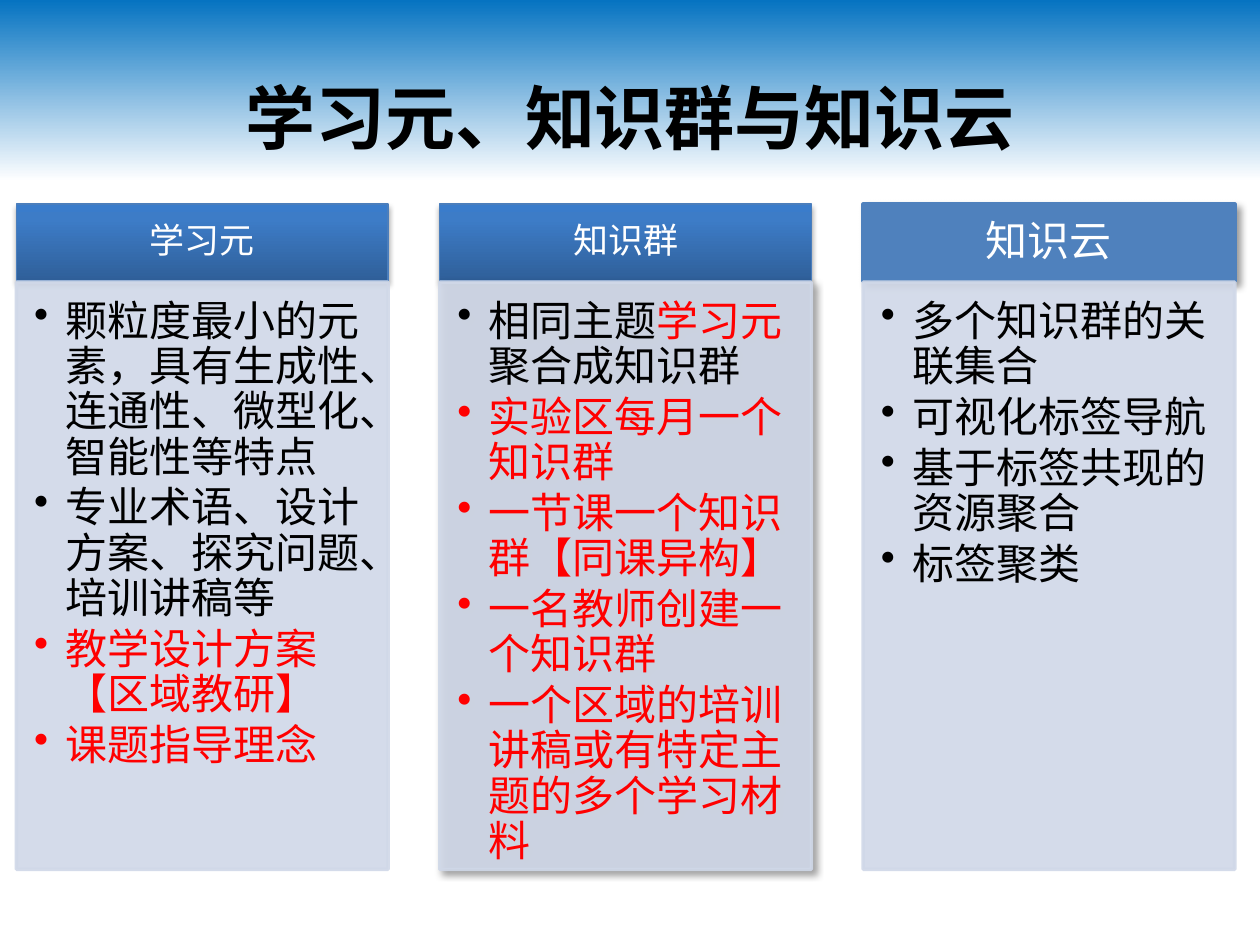
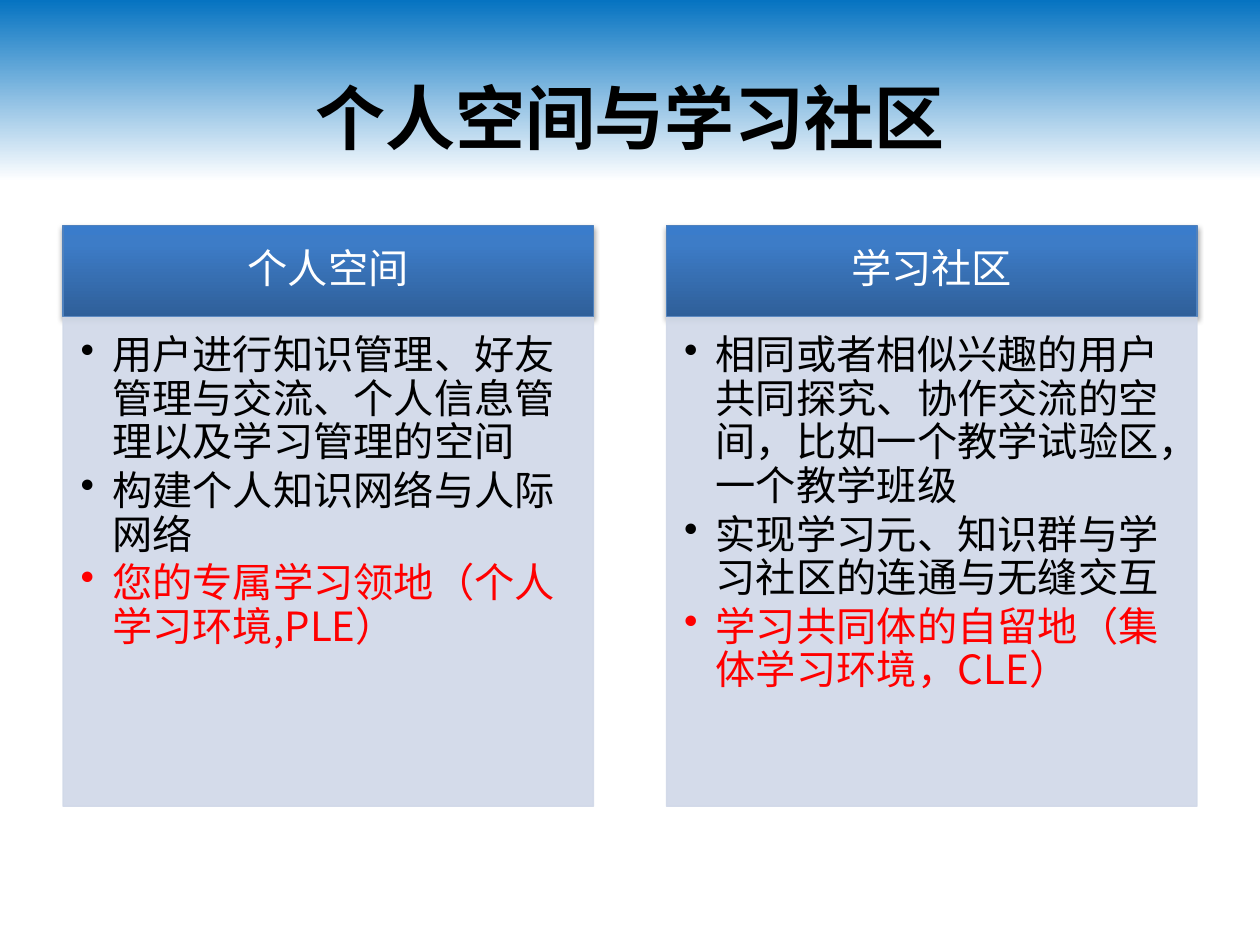
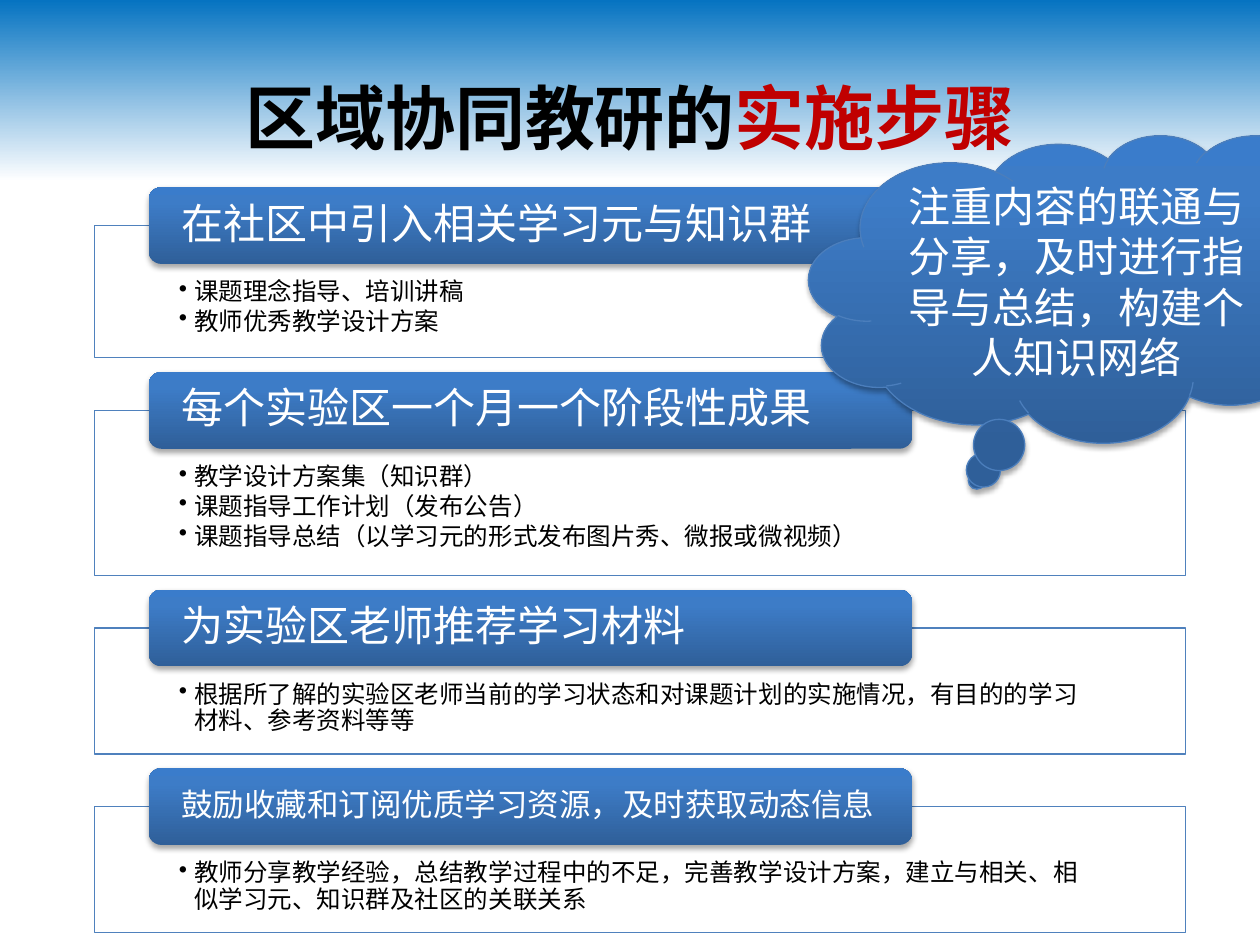
from pptx import Presentation
from pptx.dml.color import RGBColor
from pptx.enum.shapes import MSO_SHAPE as SHAPE
from pptx.enum.text import MSO_ANCHOR as ANCHOR, PP_ALIGN as ALIGN
from pptx.oxml import parse_xml
from pptx.oxml.ns import nsdecls, qn
from pptx.oxml.xmlchemy import OxmlElement
from pptx.util import Inches, Pt

COLORS = {
    "black": "000000", "white": "FFFFFF", "red": "FF0000", "dark red": "C00000",
    "sky": "0070C0", "blue": "4F81BD", "edge": "4B7EBC", "pale": "D0D8E8",
    "deep": "2F5F99", "mid": "3D7CC7", "light": "3A7CCB",
}
FONT, ACCENT_FONT = "Noto Sans CJK SC", "Noto Sans CJK JP"
COLUMNS, ROWS = 100, 75
WIDTH, HEIGHT = Inches(10), Inches(7.5)

# Gradients: (stops, clockwise angle). Shadows: (alpha %, blur pt, distance pt, angle).
BAND = ([(0, "sky"), (100, "white")], 90)
GLOSS = ([(0, "deep"), (80, "mid"), (100, "light")], 270)
SOFT_SHADOW = (35, 3.1, 1.8, 90)
CORNER_SHADOW = (40, 4, 3, 45)


def rgb(name):
    return RGBColor.from_string(COLORS[name])


def sub(parent, tag, **attributes):
    child = OxmlElement(tag)
    for key, value in attributes.items():
        child.set(key, str(value))
    parent.append(child)
    return child


def red(*texts):
    return [[(text, "red")] for text in texts]


def write(shape, paragraphs, size, color="white", bold=False, align=ALIGN.LEFT,
          anchor=ANCHOR.MIDDLE, insets=(1, 0.5, 1, 0.5), spacing=0.9, bullet=0):
    """Fill a shape with paragraphs: strings, or lists of (text, colour, font) runs.

    Insets and the bullet's hanging indent are in grid columns.
    """
    frame = shape.text_frame
    frame.word_wrap = True
    frame.vertical_anchor = anchor
    (frame.margin_left, frame.margin_top,
     frame.margin_right, frame.margin_bottom) = [int(n * WIDTH / COLUMNS) for n in insets]
    for index, content in enumerate(paragraphs):
        paragraph = frame.paragraphs[0] if index == 0 else frame.add_paragraph()
        properties = paragraph._p.get_or_add_pPr()
        properties.set("hangingPunct", "1")
        if bullet:
            indent = int(bullet * WIDTH / COLUMNS)
            properties.set("marL", str(indent))
            properties.set("indent", str(-indent))
            sub(properties, "a:buChar", char="•")
            paragraph.space_after = Pt(round(size * 0.13, 1))
        paragraph.alignment = align
        paragraph.line_spacing = spacing
        runs = [(content,)] if isinstance(content, str) else content
        for text, *style in runs:
            run_color, font_name = style + [color, FONT][len(style):]
            run = paragraph.add_run()
            run.text = text
            run.font.size, run.font.bold = Pt(size), bold
            run.font.color.rgb = rgb(run_color)
            run.font.name = font_name
            sub(run._r.get_or_add_rPr(), "a:ea", typeface=font_name)


class Deck:
    def __init__(self):
        self.presentation = Presentation()
        self.presentation.slide_width, self.presentation.slide_height = WIDTH, HEIGHT
        self.slide = None

    def place(self, left, top, width, height):
        """Turn grid columns and rows into slide lengths."""
        return [int(left * WIDTH / COLUMNS), int(top * HEIGHT / ROWS),
                int(width * WIDTH / COLUMNS), int(height * HEIGHT / ROWS)]

    def start(self, *title_runs):
        self.slide = self.presentation.slides.add_slide(self.presentation.slide_layouts[6])
        self.box((0, -0.3, 100, 14.7), BAND)
        title = self.slide.shapes.add_textbox(*self.place(5, 3, 90, 12.5))
        write(title, [list(title_runs)], 40, "black", bold=True,
              align=ALIGN.CENTER, spacing=1.0)

    def box(self, area, fill, line=None, weight=0.75, shadow=None, opacity=100,
            line_opacity=100, kind=SHAPE.RECTANGLE):
        """Add a shape; fill is a colour name or a gradient."""
        shape = self.slide.shapes.add_shape(kind, *self.place(*area))
        if isinstance(fill, str):
            shape.fill.solid()
            shape.fill.fore_color.rgb = rgb(fill)
            self.fade(shape.fill._xPr, opacity)
        else:
            self.blend(shape, *fill)
        if line:
            shape.line.color.rgb = rgb(line)
            shape.line.width = Pt(weight)
            self.fade(shape.line._get_or_add_ln(), line_opacity)
        else:
            shape.line.fill.background()
        shape.shadow.inherit = False
        if shadow:
            self.cast(shape, *shadow)
        return shape

    def fade(self, holder, opacity):
        if opacity < 100:
            color = holder.find(qn("a:solidFill")).find(qn("a:srgbClr"))
            sub(color, "a:alpha", val=opacity * 1000)

    def blend(self, shape, stops, angle):
        shape.fill.gradient()
        plain = shape.element.spPr.find(qn("a:gradFill"))
        gradient = parse_xml(f'<a:gradFill {nsdecls("a")} rotWithShape="1"/>')
        stop_list = sub(gradient, "a:gsLst")
        for position, color in stops:
            sub(sub(stop_list, "a:gs", pos=position * 1000), "a:srgbClr", val=COLORS[color])
        sub(gradient, "a:lin", ang=angle * 60000, scaled=0)
        plain.getparent().replace(plain, gradient)

    def cast(self, shape, alpha, blur, distance, angle):
        effects = shape.element.spPr.find(qn("a:effectLst"))
        outer = sub(effects, "a:outerShdw", blurRad=Pt(blur), dist=Pt(distance),
                    dir=angle * 60000, algn="tl", rotWithShape=0)
        sub(sub(outer, "a:srgbClr", val=COLORS["black"]), "a:alpha", val=alpha * 1000)

    def card(self, left, top, width, heights, heading, points, size, heading_size,
             body_weight=0.75, body_shadow=None, **heading_style):
        """A heading bar on a pale panel of bullet points."""
        bar_height, panel_height = heights
        style = {"fill": GLOSS, "line": "edge", "shadow": SOFT_SHADOW, **heading_style}
        bar = self.box((left, top, width, bar_height), **style)
        write(bar, [heading], heading_size, align=ALIGN.CENTER, insets=(1.7, 1, 1.7, 1))
        panel = self.box((left, top + bar_height + 0.1, width, panel_height), "pale",
                         line="pale", weight=body_weight, shadow=body_shadow,
                         opacity=90, line_opacity=90)
        write(panel, points, size, "black", anchor=ANCHOR.TOP,
              insets=(1.4, 1.4, 1.9, 2.1), bullet=2.5)

    def step(self, top, height, heading, points, size):
        """A framed list with a rounded tab over its upper edge."""
        frame = self.box((7.5, top, 86.6, height), "white", line="blue", opacity=90)
        write(frame, points, 14, "black", anchor=ANCHOR.TOP,
              insets=(6.7, 4.3, 6.7, 1.1), bullet=1.2)
        tab = self.box((11.8, top - 3.05, 60.6, 6.1), GLOSS, shadow=SOFT_SHADOW,
                       kind=SHAPE.ROUNDED_RECTANGLE)
        write(tab, [heading], size, insets=(2.3, 0, 2.3, 0))


def build_concepts(deck):
    deck.start(("学习元、知识群与知识云",))
    concepts = [
        ("学习元", 20, ["颗粒度最小的元素，具有生成性、连通性、微型化、智能性等特点",
                     "专业术语、设计方案、探究问题、培训讲稿等",
                     *red("教学设计方案【区域教研】", "课题指导理念")], {}),
        ("知识群", 20, [[("相同主题",), ("学习元", "red"), ("聚合成知识群",)],
                     *red("实验区每月一个知识群", "一节课一个知识群【同课异构】",
                          "一名教师创建一个知识群",
                          "一个区域的培训讲稿或有特定主题的多个学习材料")],
         {"body_shadow": CORNER_SHADOW}),
        ("知识云", 24, ["多个知识群的关联集合", "可视化标签导航",
                     "基于标签共现的资源聚合", "标签聚类"],
         {"fill": "blue", "line": "blue", "weight": 2, "shadow": CORNER_SHADOW}),
    ]
    for index, (heading, heading_size, points, style) in enumerate(concepts):
        deck.card(1.3 + 33.6 * index, 16.2, 29.5, (6.1, 46.6), heading, points, 24,
                  heading_size, body_weight=2, **style)


def build_spaces(deck):
    deck.start(("个人空间与学习社区",))
    spaces = [
        ("个人空间", ["用户进行知识管理、好友管理与交流、个人信息管理以及学习管理的空间",
                  "构建个人知识网络与人际网络",
                  *red("您的专属学习领地（个人学习环境,PLE）")]),
        ("学习社区", ["相同或者相似兴趣的用户共同探究、协作交流的空间，比如一个教学试验区，一个教学班级",
                  "实现学习元、知识群与学习社区的连通与无缝交互",
                  *red("学习共同体的自留地（集体学习环境，CLE）")]),
    ]
    for index, (heading, points) in enumerate(spaces):
        deck.card(5 + 47.9 * index, 17.9, 42.1, (7.2, 38.8), heading, points, 23, 23,
                  line="blue")


def build_steps(deck):
    deck.start(("区域协同教研的",), ("实施步骤", "dark red", ACCENT_FONT))
    steps = [
        (10.5, "在社区中引入相关学习元与知识群", 24,
         ["课题理念指导、培训讲稿", "教师优秀教学设计方案"]),
        (13.1, "每个实验区一个月一个阶段性成果", 24,
         ["教学设计方案集（知识群）", "课题指导工作计划（发布公告）",
          "课题指导总结（以学习元的形式发布图片秀、微报或微视频）"]),
        (10, "为实验区老师推荐学习材料", 24,
         ["根据所了解的实验区老师当前的学习状态和对课题计划的实施情况，有目的的学习材料、参考资料等等"]),
        (10, "鼓励收藏和订阅优质学习资源，及时获取动态信息", 18,
         ["教师分享教学经验，总结教学过程中的不足，完善教学设计方案，建立与相关、相似学习元、知识群及社区的关联关系"]),
    ]
    top, gap = 17.9, 4.17
    for height, heading, size, points in steps:
        deck.step(top, height, heading, points, size)
        top += height + gap
    advice = deck.box((64.2, 10.7, 45.7, 24.4), GLOSS, line="edge", shadow=SOFT_SHADOW,
                      kind=SHAPE.CLOUD_CALLOUT)
    write(advice, ["注重内容的联通与分享，及时进行指导与总结，构建个人知识网络"], 24,
          align=ALIGN.CENTER, spacing=1.0)


def main():
    deck = Deck()
    build_concepts(deck)
    build_spaces(deck)
    build_steps(deck)
    deck.presentation.save("out.pptx")


if __name__ == "__main__":
    main()
